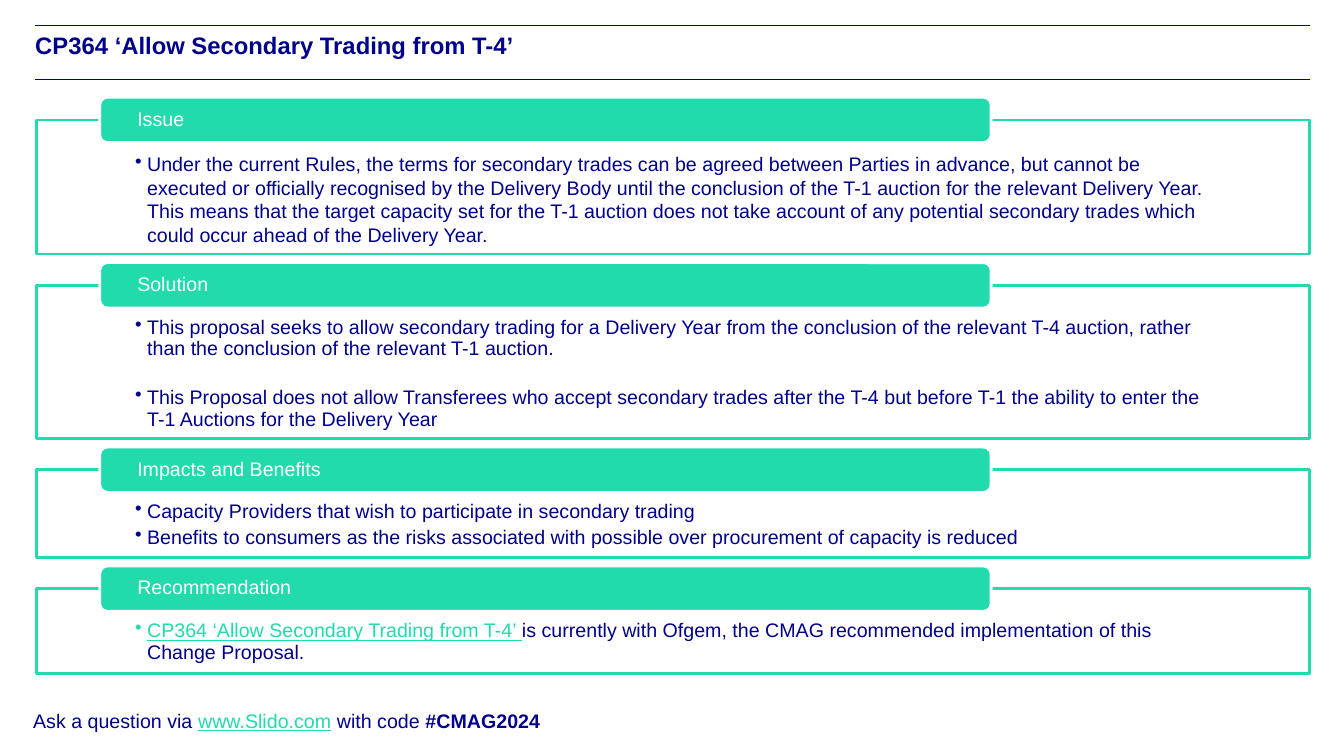
from lxml.etree import SubElement
from pptx import Presentation
from pptx.dml.color import RGBColor
from pptx.enum.shapes import MSO_CONNECTOR, MSO_SHAPE
from pptx.enum.text import MSO_ANCHOR, PP_ALIGN
from pptx.oxml.ns import qn
from pptx.util import Emu, Inches, Pt

THEME = {
    "navy": RGBColor(0x00, 0x00, 0x8B),
    "teal": RGBColor(0x21, 0xDB, 0xAD),
    "white": RGBColor(0xFF, 0xFF, 0xFF),
    "font": "Arial",
    "title": Pt(17),
    "body": Pt(14),
}
PLAIN = {"color": THEME["navy"]}
LINK = {"color": THEME["teal"], "underline": True}
STRONG = {"color": THEME["navy"], "bold": True}
HEADING = {"color": THEME["white"]}

MARGIN, CONTENT_WIDTH = Inches(0.35), Inches(12.64)
PANEL_LEFT, PANEL_WIDTH = Inches(0.36), Inches(12.63)
TAB_LEFT, TAB_WIDTH, TAB_HEIGHT = Inches(0.99), Inches(8.84), Inches(0.45)
FIRST_PANEL_TOP, PANEL_GAP = Inches(1.19), Inches(0.31)
HANGING_INDENT = Inches(0.12)

# heading, panel height, line spacing, space after a bullet, bullets as (text, format) runs
SECTIONS = [
    ("Issue", Inches(1.33), 1.0, Pt(2), [
        [("Under the current Rules, the terms for secondary trades can be agreed between "
          "Parties in advance, but cannot be executed or officially recognised by the "
          "Delivery Body until the conclusion of the T-1 auction for the relevant Delivery "
          "Year. This means that the target capacity set for the T-1 auction does not take "
          "account of any potential secondary trades which could occur ahead of the "
          "Delivery Year.", PLAIN)],
    ]),
    ("Solution", Inches(1.52), 0.9, Pt(20), [
        [("This proposal seeks to allow secondary trading for a Delivery Year from the "
          "conclusion of the relevant T-4 auction, rather than the conclusion of the "
          "relevant T-1 auction.", PLAIN)],
        [("This Proposal does not allow Transferees who accept secondary trades after the "
          "T-4 but before T-1 the ability to enter the T-1 Auctions for the Delivery Year",
          PLAIN)],
    ]),
    ("Impacts and Benefits", Inches(0.87), 0.9, Pt(3), [
        [("Capacity Providers that wish to participate in secondary trading", PLAIN)],
        [("Benefits to consumers as the risks associated with possible over procurement of "
          "capacity is reduced", PLAIN)],
    ]),
    ("Recommendation", Inches(0.84), 0.9, Pt(2), [
        [("CP364 ‘Allow Secondary Trading from T-4’ ", LINK),
         ("is currently with Ofgem, the CMAG recommended implementation of this Change "
          "Proposal.", PLAIN)],
    ]),
]


def set_frame(shape, anchor, insets):
    """Wrap the text, anchor it and set left, top, right and bottom insets in inches."""
    frame = shape.text_frame
    sides = ("margin_left", "margin_top", "margin_right", "margin_bottom")
    values = dict(zip(sides, map(Inches, insets)), word_wrap=True, vertical_anchor=anchor)
    for name, value in values.items():
        setattr(frame, name, value)
    return frame


def add_runs(paragraph, runs, size=THEME["body"]):
    paragraph.alignment = PP_ALIGN.LEFT
    for text, style in runs:
        run = paragraph.add_run()
        run.text = text
        values = {"name": THEME["font"], "size": size, "bold": False, "underline": False}
        values.update(style)
        run.font.color.rgb = values.pop("color")
        for name, value in values.items():
            setattr(run.font, name, value)


presentation = Presentation()
presentation.slide_width, presentation.slide_height = Inches(13.33), Inches(7.5)
slide = presentation.slides.add_slide(presentation.slide_layouts[6])

# Title between two rules
for rule_top in (Inches(0.25), Inches(0.79)):
    rule = slide.shapes.add_connector(
        MSO_CONNECTOR.STRAIGHT, MARGIN, rule_top, MARGIN + CONTENT_WIDTH, rule_top)
    rule.line.color.rgb = THEME["navy"]
    rule.line.width = Pt(0.5)
    SubElement(rule.element.spPr, qn("a:effectLst"))

title = slide.shapes.add_textbox(MARGIN, Inches(0.3), CONTENT_WIDTH, Inches(0.49))
title_frame = set_frame(title, MSO_ANCHOR.TOP, (0, 0, 0, 0))
add_runs(title_frame.paragraphs[0],
         [("CP364 ‘Allow Secondary Trading from T-4’", STRONG)], THEME["title"])

# Stacked panels, each with a tab centred on its top edge
panel_top = FIRST_PANEL_TOP
for heading, panel_height, line_spacing, space_after, bullets in SECTIONS:
    panel = slide.shapes.add_shape(
        MSO_SHAPE.RECTANGLE, PANEL_LEFT, panel_top, PANEL_WIDTH, panel_height)
    tab = slide.shapes.add_shape(
        MSO_SHAPE.ROUNDED_RECTANGLE, TAB_LEFT, Emu(panel_top - TAB_HEIGHT // 2),
        TAB_WIDTH, TAB_HEIGHT)
    for shape, fill, outline in ((panel, "white", "teal"), (tab, "teal", "white")):
        shape.shadow.inherit = False
        shape.fill.solid()
        shape.fill.fore_color.rgb = THEME[fill]
        shape.line.color.rgb = THEME[outline]
        shape.line.width = Pt(2)
    panel_color = panel.element.spPr.find(qn("a:solidFill"))[0]
    SubElement(panel_color, qn("a:alpha"), val="90000")

    panel_frame = set_frame(panel, MSO_ANCHOR.TOP, (0.98, 0.32, 0.98, 0.11))
    for index, runs in enumerate(bullets):
        paragraph = panel_frame.add_paragraph() if index else panel_frame.paragraphs[0]
        paragraph.line_spacing = line_spacing
        paragraph.space_after = space_after
        properties = paragraph._p.get_or_add_pPr()
        properties.set("marL", str(HANGING_INDENT))
        properties.set("indent", str(-HANGING_INDENT))
        SubElement(properties, qn("a:buChar"), char="•")
        add_runs(paragraph, runs)

    tab_frame = set_frame(tab, MSO_ANCHOR.MIDDLE, (0.35, 0, 0.35, 0))
    tab_frame.paragraphs[0].line_spacing = 0.9
    add_runs(tab_frame.paragraphs[0], [(heading, HEADING)])
    panel_top += panel_height + PANEL_GAP

# Question prompt
prompt = slide.shapes.add_textbox(Inches(0.23), Inches(6.98), Inches(5.61), Inches(0.34))
prompt_frame = set_frame(prompt, MSO_ANCHOR.TOP, (0.1, 0.05, 0.1, 0.05))
add_runs(prompt_frame.paragraphs[0], [
    ("Ask a question via ", PLAIN),
    ("www.Slido.com", LINK),
    (" with code ", PLAIN),
    ("#CMAG2024", STRONG),
])

presentation.save("out.pptx")
